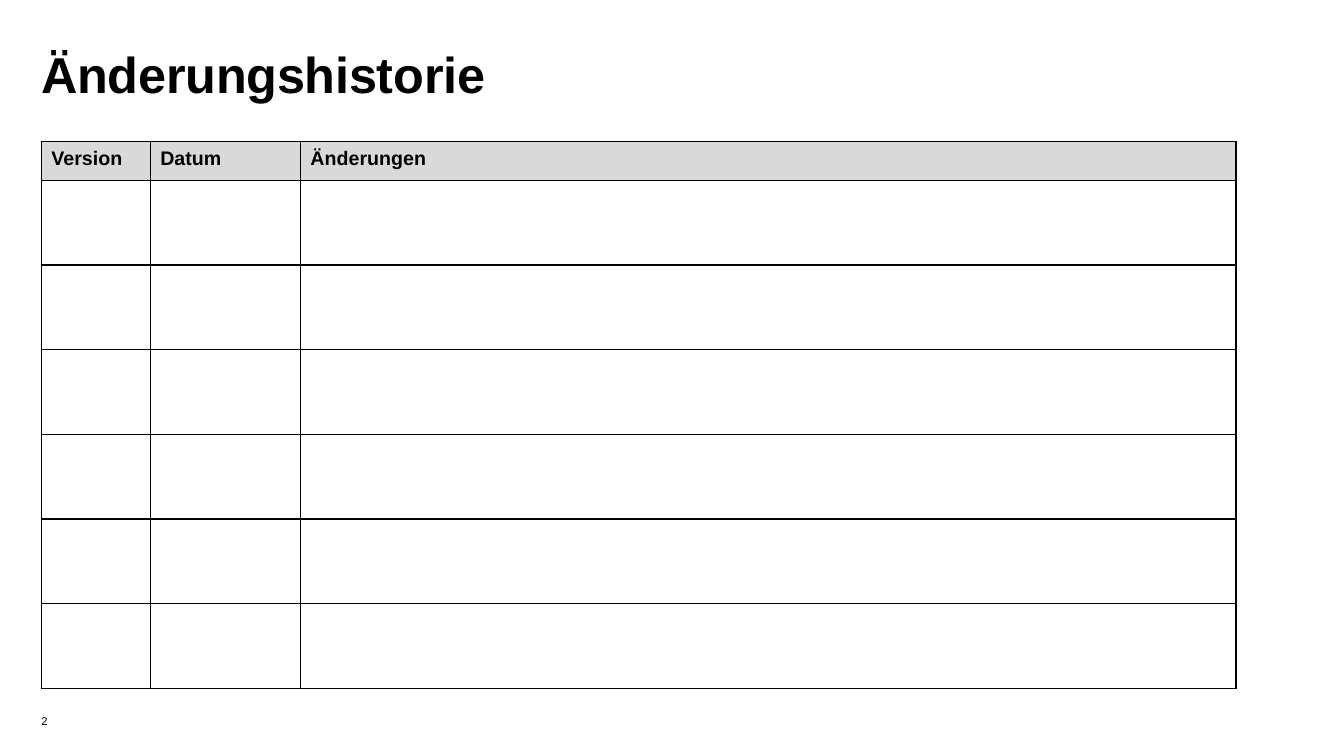
from lxml import etree
from pptx import Presentation
from pptx.dml.color import RGBColor
from pptx.enum import text
from pptx.oxml import ns
from pptx.util import Inches, Pt

FONT = "Arial"
BLACK = "000000"
HEADER_FILL = "D9D9D9"
COL_WIDTHS = [1.08, 1.49, 9.28]
HEADERS = ["Version", "Datum", "Änderungen"]
ENTRY_ROWS = 6
HEADER_HEIGHT = 0.39


def rgb(value):
    return RGBColor.from_string(value)


def write(tf, content, size, bold=False, color=BLACK, spacing=None, after=0, line=None):
    p = tf.paragraphs[0]
    p.alignment = text.PP_ALIGN.LEFT
    p.space_before = Pt(0)
    p.space_after = Pt(after)
    if line:
        p.line_spacing = line
    r = p.add_run()
    r.text = content
    r.font.name = FONT
    r.font.size = Pt(size)
    r.font.bold = bold
    r.font.color.rgb = rgb(color)
    if spacing is not None:
        r._r.get_or_add_rPr().set("spc", str(round(spacing * 100)))


def prepare_frame(tf):
    tf.margin_left = tf.margin_right = tf.margin_top = tf.margin_bottom = 0
    tf.word_wrap = True
    tf.auto_size = text.MSO_AUTO_SIZE.NONE
    tf.vertical_anchor = text.MSO_ANCHOR.BOTTOM


def border_cell(cell, color=BLACK, width=1):
    tcPr = cell._tc.get_or_add_tcPr()
    for i, side in enumerate(["lnL", "lnR", "lnT", "lnB"]):
        ln = etree.Element(ns.qn(f"a:{side}"), w=str(Pt(width)))
        fill = etree.SubElement(ln, ns.qn("a:solidFill"))
        etree.SubElement(fill, ns.qn("a:srgbClr"), val=color)
        tcPr.insert(i, ln)


def add_title(slide, left, top, width, height):
    sp = slide.shapes.title
    sp.left, sp.top, sp.width, sp.height = map(Inches, (left, top, width, height))
    prepare_frame(sp.text_frame)
    write(sp.text_frame, "Änderungshistorie", 36, bold=True, spacing=-0.2, after=6)


def add_history_table(slide, left, top, width, height):
    frame = slide.shapes.add_table(
        ENTRY_ROWS + 1, len(HEADERS), *map(Inches, (left, top, width, height)))
    table = frame.table
    table.first_row = table.horz_banding = False
    for column, share in zip(table.columns, COL_WIDTHS):
        column.width = Inches(width * share / sum(COL_WIDTHS))
    entry_height = (height - HEADER_HEIGHT) / ENTRY_ROWS
    for i, row in enumerate(table.rows):
        row.height = Inches(entry_height if i else HEADER_HEIGHT)
        for cell, header in zip(row.cells, HEADERS):
            if i == 0:
                cell.fill.solid()
                cell.fill.fore_color.rgb = rgb(HEADER_FILL)
                write(cell.text_frame, header, 14, bold=True, line=1.07)
            else:
                cell.fill.background()
            border_cell(cell)


def add_page_number(slide, left, top, width, height):
    sp = slide.shapes.add_textbox(*map(Inches, (left, top, width, height)))
    prepare_frame(sp.text_frame)
    write(sp.text_frame, "2", 8)


def main():
    prs = Presentation()
    prs.slide_width, prs.slide_height = Inches(13.33), Inches(7.5)
    slide = prs.slides.add_slide(prs.slide_layouts[5])
    margin = 0.41
    add_page_number(slide, margin, 6.9, 1.57, 0.32)
    add_title(slide, margin, margin, 9.65, 0.62)
    add_history_table(slide, margin, 1.4, 11.85, 5.43)
    prs.save("out.pptx")


if __name__ == "__main__":
    main()
